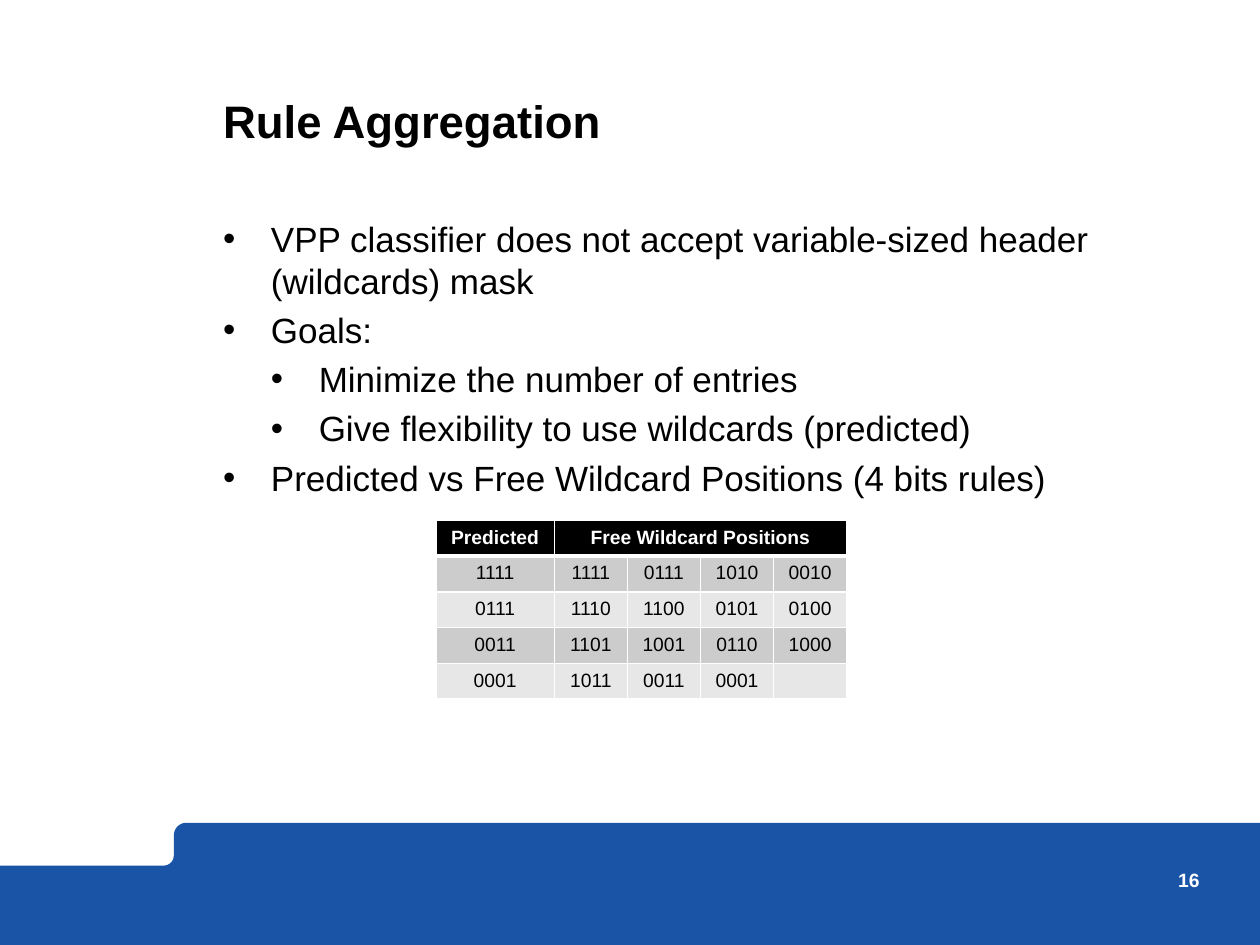
from dataclasses import dataclass
from math import cos, pi, sin

from lxml.etree import SubElement
from pptx import Presentation
from pptx.dml.color import RGBColor
from pptx.enum.text import MSO_ANCHOR, PP_ALIGN
from pptx.oxml.ns import qn
from pptx.util import Inches, Pt

FONT = "Arial"
BLACK, WHITE, BLUE = "000000", "FFFFFF", "1954A6"
ROW_FILLS = ("CCCCCC", "E7E7E7")
INDENT = 0.38


@dataclass
class Bullet:
    text: str
    level: int = 0


BULLETS = [
    Bullet("VPP classifier does not accept variable-sized header (wildcards) mask"),
    Bullet("Goals:"),
    Bullet("Minimize the number of entries", 1),
    Bullet("Give flexibility to use wildcards (predicted)", 1),
    Bullet("Predicted vs Free Wildcard Positions (4 bits rules)"),
]
TABLE_ROWS = [
    ["Predicted", "Free Wildcard Positions", "", "", ""],
    ["1111", "1111", "0111", "1010", "0010"],
    ["0111", "1110", "1100", "0101", "0100"],
    ["0011", "1101", "1001", "0110", "1000"],
    ["0001", "1011", "0011", "0001", ""],
]
COLUMN_WIDTHS = [0.94] + [0.58] * 4
ROW_HEIGHT = 0.28


def color(value: str) -> RGBColor:
    return RGBColor.from_string(value)


def place(shape, left: float, top: float, width: float, height: float) -> None:
    shape.left, shape.top = Inches(left), Inches(top)
    shape.width, shape.height = Inches(width), Inches(height)


def format_runs(paragraph, size: float, value: str, bold: bool = False) -> None:
    for run in paragraph.runs:
        run.font.name = FONT
        run.font.size = Pt(size)
        run.font.bold = bold
        run.font.color.rgb = color(value)


def prepare_frame(text_frame) -> None:
    """Wrap the text and remove the insets."""
    text_frame.word_wrap = True
    text_frame.margin_left = text_frame.margin_right = 0
    text_frame.margin_top = text_frame.margin_bottom = 0


def arc(x: float, y: float, radius: float, start: int, end: int) -> list:
    """Points along a circle from start to end degrees, clockwise on screen."""
    steps = 8
    angles = [(start + (end - start) * i / steps) * pi / 180 for i in range(steps + 1)]
    return [(x + radius * cos(a), y + radius * sin(a)) for a in angles]


def add_footer_band(slide) -> None:
    step_x, top, step_y, bottom = 1.38, 6.53, 6.87, 7.52
    points = [(10, top), (10, bottom), (0, bottom), (0, step_y)]
    points += arc(step_x - 0.08, step_y - 0.08, 0.08, 90, 0)
    points += arc(step_x + 0.1, top + 0.1, 0.1, 180, 270)
    # The builder rounds coordinates to whole units, so it is given EMU.
    corners = [(Inches(x), Inches(y)) for x, y in points]
    builder = slide.shapes.build_freeform(*corners[0])
    builder.add_line_segments(corners[1:], close=True)
    band = builder.convert_to_shape()
    band.shadow.inherit = False
    band.fill.solid()
    band.fill.fore_color.rgb = color(BLUE)
    band.line.fill.background()


def add_title(slide, text: str) -> None:
    title = slide.shapes.title
    place(title, 1.77, 0.44, 7.59, 0.73)
    text_frame = title.text_frame
    prepare_frame(text_frame)
    text_frame.vertical_anchor = MSO_ANCHOR.BOTTOM
    text_frame.text = text
    paragraph = text_frame.paragraphs[0]
    paragraph.alignment = PP_ALIGN.LEFT
    paragraph.line_spacing = Pt(30)
    format_runs(paragraph, 26, BLACK, bold=True)


def add_bullets(slide, bullets: list[Bullet]) -> None:
    box = slide.shapes.add_textbox(Inches(1.77), Inches(1.73), Inches(7.59), Inches(4.46))
    text_frame = box.text_frame
    prepare_frame(text_frame)
    text_frame.text = "\n".join(bullet.text for bullet in bullets)
    for i, (paragraph, bullet) in enumerate(zip(text_frame.paragraphs, bullets)):
        paragraph.level = bullet.level
        paragraph.line_spacing = Pt(24)
        paragraph.space_before = Pt(4 if i else 0)
        properties = paragraph._p.get_or_add_pPr()
        properties.set("marL", str(Inches(INDENT * (bullet.level + 1))))
        properties.set("indent", str(-Inches(INDENT)))
        SubElement(properties, qn("a:buFont"), typeface=FONT)
        SubElement(properties, qn("a:buChar"), char="•")
        format_runs(paragraph, 20, BLACK)


def set_borders(cell, top: float, bottom: float) -> None:
    properties = cell._tc.get_or_add_tcPr()
    for side, width in (("L", 1), ("R", 1), ("T", top), ("B", bottom)):
        line = SubElement(properties, qn(f"a:ln{side}"), w=str(Pt(width)))
        fill = SubElement(line, qn("a:solidFill"))
        SubElement(fill, qn("a:srgbClr"), val=WHITE)


def add_wildcard_table(slide, rows: list[list[str]]) -> None:
    frame = slide.shapes.add_table(
        len(rows), len(COLUMN_WIDTHS), Inches(3.46), Inches(4.13),
        Inches(sum(COLUMN_WIDTHS)), Inches(ROW_HEIGHT * len(rows)))
    table = frame.table
    for column, width in zip(table.columns, COLUMN_WIDTHS):
        column.width = Inches(width)
    for i, values in enumerate(rows):
        table.rows[i].height = Inches(ROW_HEIGHT)
        is_header = i == 0
        for cell, value in zip(table.rows[i].cells, values):
            set_borders(cell, top=3 if i == 1 else 1, bottom=3 if is_header else 1)
            cell.fill.solid()
            cell.fill.fore_color.rgb = color(BLACK if is_header else ROW_FILLS[(i - 1) % 2])
            cell.text_frame.text = value
            paragraph = cell.text_frame.paragraphs[0]
            paragraph.alignment = PP_ALIGN.CENTER
            paragraph.font.size = Pt(11)
            format_runs(paragraph, 11, WHITE if is_header else BLACK, bold=is_header)
    table.cell(0, 1).merge(table.cell(0, len(COLUMN_WIDTHS) - 1))


def add_slide_number(slide, text: str) -> None:
    box = slide.shapes.add_textbox(Inches(8.94), Inches(6.89), Inches(0.58), Inches(0.4))
    prepare_frame(box.text_frame)
    box.text_frame.text = text
    paragraph = box.text_frame.paragraphs[0]
    paragraph.alignment = PP_ALIGN.RIGHT
    format_runs(paragraph, 11, WHITE, bold=True)


def main() -> None:
    presentation = Presentation()
    presentation.slide_width, presentation.slide_height = Inches(10), Inches(7.5)
    slide = presentation.slides.add_slide(presentation.slide_layouts[5])
    add_footer_band(slide)
    add_title(slide, "Rule Aggregation")
    add_bullets(slide, BULLETS)
    add_wildcard_table(slide, TABLE_ROWS)
    add_slide_number(slide, "16")
    presentation.save("out.pptx")


if __name__ == "__main__":
    main()
